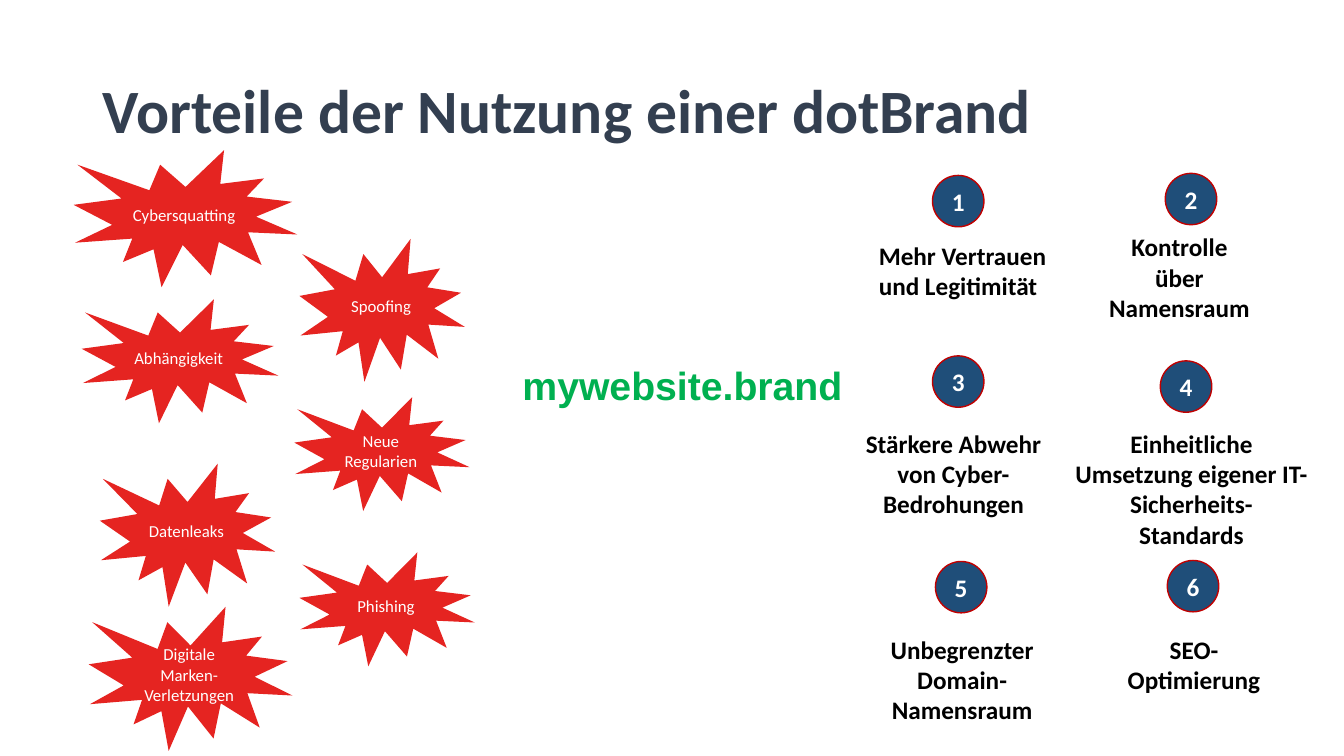
"""Build the slide on the benefits of a dotBrand."""
import pptx
import pptx.util
import pptx.dml.color
import pptx.enum.shapes
import pptx.enum.text

SHAPE = pptx.enum.shapes.MSO_SHAPE
ALIGN = pptx.enum.text.PP_ALIGN
MIDDLE = pptx.enum.text.MSO_ANCHOR.MIDDLE

deck = pptx.Presentation()
deck.slide_width = pptx.util.Inches(13.33)
deck.slide_height = pptx.util.Inches(7.5)
slide = deck.slides.add_slide(deck.slide_layouts[5])


def place(left, top, wide, high):
    """Turn percentages of the slide into lengths."""
    across, down = deck.slide_width / 100, deck.slide_height / 100
    return [round(n) for n in (left * across, top * down, wide * across, high * down)]


def write(shape, text, size, hue, bold=True, align=ALIGN.CENTER, face="Calibri"):
    """Fill a shape with formatted text."""
    frame = shape.text_frame
    frame.text = text
    frame.word_wrap = True
    for line in frame.paragraphs:
        line.alignment = align
        for run in line.runs:
            run.font.name = face
            run.font.size = pptx.util.Pt(size)
            run.font.bold = bold
            run.font.color.rgb = pptx.dml.color.RGBColor.from_string(hue)
    return frame


title = slide.shapes.title
title.left, title.top, title.width, title.height = place(6.9, 5.33, 86.25, 19.33)
frame = write(title, "Vorteile der Nutzung einer dotBrand", 44, "333F50", align=ALIGN.LEFT)
frame.vertical_anchor = MIDDLE
frame.paragraphs[0].line_spacing = 0.9

site = slide.shapes.add_textbox(*place(34.95, 46.27, 31.65, 8.13))
frame = write(site, "mywebsite.brand", 28, "00B050", face="Arial")
frame.paragraphs[0].line_spacing = 1.15
frame.paragraphs[0].space_after = pptx.util.Pt(10)

risks = [
    ("Cybersquatting", 5.48, 19.87, 16.65, 18.13),
    ("Abhängigkeit", 6.08, 39.6, 14.63, 16.4),
    ("Spoofing", 22.28, 31.6, 12.3, 18.93),
    ("Phishing", 22.28, 73.07, 13.05, 15.07),
    ("Digitale\nMarken-Verletzungen", 6.6, 80.27, 15.15, 19.07),
    ("Neue Regularien", 21.9, 52.53, 13.05, 15.07),
    ("Datenleaks", 7.43, 61.33, 13.05, 18.93),
]
for text, *area in risks:
    burst = slide.shapes.add_shape(SHAPE.EXPLOSION1, *place(*area))
    burst.shadow.inherit = False
    burst.fill.solid()
    burst.fill.fore_color.rgb = pptx.dml.color.RGBColor.from_string("E52421")
    burst.line.fill.background()
    write(burst, text, 12, "FFFFFF", bold=False).vertical_anchor = MIDDLE

gains = [
    ("Mehr Vertrauen und Legitimität", (69.38, 23.2), (64.65, 31.07, 14.1, 9.47)),
    ("Kontrolle über Namensraum", (86.7, 22.93), (81.6, 30, 12.3, 13.47)),
    ("Stärkere Abwehr von Cyber-Bedrohungen", (69.38, 47.07), (63.3, 56, 15.3, 17.47)),
    ("Einheitliche\nUmsetzung eigener IT-Sicherheits-\nStandards",
     (86.33, 47.73), (78.53, 56, 20.25, 17.47)),
    ("Unbegrenzter Domain-Namensraum", (69.6, 74.27), (63.3, 83.2, 16.58, 13.47)),
    ("SEO-\nOptimierung", (86.85, 74.13), (82.35, 83.2, 12.98, 9.47)),
]
for count, (text, spot, area) in enumerate(gains, 1):
    disc = slide.shapes.add_shape(SHAPE.OVAL, *place(*spot, 3.83, 6.8))
    disc.shadow.inherit = False
    disc.fill.solid()
    disc.fill.fore_color.rgb = pptx.dml.color.RGBColor.from_string("1F4E79")
    disc.line.color.rgb = pptx.dml.color.RGBColor.from_string("C00000")
    disc.line.width = pptx.util.Pt(1)
    frame = write(disc, str(count), 18, "FFFFFF")
    frame.vertical_anchor = MIDDLE
    frame.margin_left = frame.margin_right = frame.margin_top = frame.margin_bottom = 0
    label = slide.shapes.add_textbox(*place(*area))
    write(label, text, 18, "000000", align=ALIGN.LEFT if count == 1 else ALIGN.CENTER)

deck.save("out.pptx")
